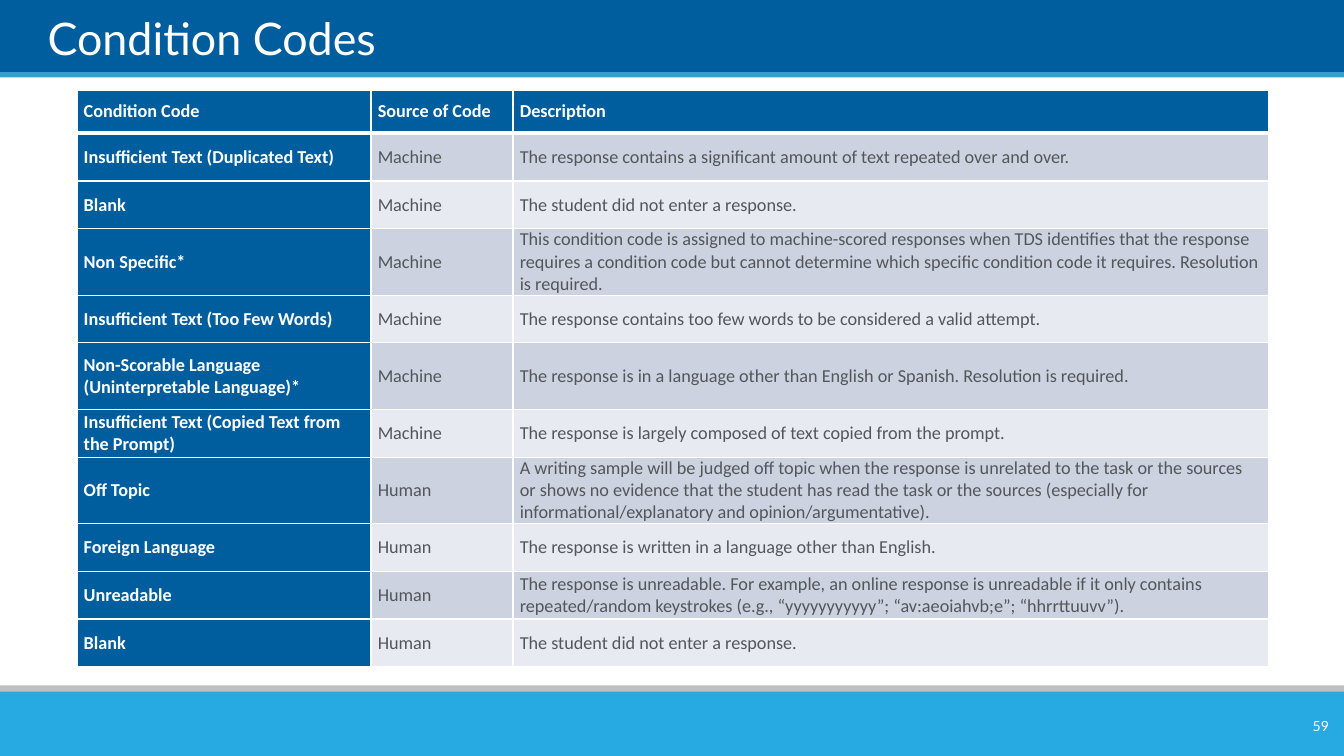
from dataclasses import dataclass

from lxml.etree import SubElement
from pptx import Presentation
from pptx.dml.color import RGBColor
from pptx.enum.shapes import MSO_SHAPE
from pptx.enum.text import MSO_ANCHOR, PP_ALIGN
from pptx.oxml.ns import qn
from pptx.slide import Slide
from pptx.table import _Cell
from pptx.text.text import TextFrame
from pptx.util import Cm, Pt


@dataclass(frozen=True)
class Theme:
    navy: str = "005E9E"
    sky: str = "35A0CE"
    footer: str = "27AAE1"
    silver: str = "BFBFBF"
    white: str = "FFFFFF"
    ink: str = "53565A"
    dark_band: str = "CCD2DF"
    light_band: str = "E7EAF0"
    heading_font: str = "Lato"
    table_font: str = "Calibri"
    title_size: int = 32
    table_size: int = 13
    number_size: int = 10
    thin_rule: int = 1
    thick_rule: int = 3


@dataclass(frozen=True)
class Band:
    top: float
    height: float
    color: str


@dataclass(frozen=True)
class Label:
    text: str
    left: float
    top: float
    width: float
    height: float
    size: int
    anchor: MSO_ANCHOR
    align: PP_ALIGN
    side_margin: float
    edge_margin: float


@dataclass(frozen=True)
class CodeRow:
    code: str
    source: str
    description: str
    height: float = 1.2


THEME = Theme()
PAGE_WIDTH, PAGE_HEIGHT = 33.87, 19.05
TALL_ROW = 1.68
COLUMN_WIDTHS = (7.41, 3.58, 19.03)

BANDS = (
    Band(-0.03, 1.9, THEME.navy),
    Band(1.82, 0.13, THEME.sky),
    Band(17.27, 0.36, THEME.silver),
    Band(17.43, 1.62, THEME.footer),
)

LABELS = (
    Label("Condition Codes", 1.2, 0.18, 31.57, 1.45, THEME.title_size,
          MSO_ANCHOR.BOTTOM, PP_ALIGN.LEFT, 0, 0),
    Label("59", 31.78, 17.91, 1.96, 0.76, THEME.number_size,
          MSO_ANCHOR.MIDDLE, PP_ALIGN.RIGHT, 0.25, 0.13),
)

ROWS = (
    CodeRow("Condition Code", "Source of Code", "Description", 1.09),
    CodeRow("Insufficient Text (Duplicated Text)", "Machine",
            "The response contains a significant amount of text repeated over and over."),
    CodeRow("Blank", "Machine", "The student did not enter a response."),
    CodeRow("Non Specific*", "Machine",
            "This condition code is assigned to machine-scored responses when TDS identifies "
            "that the response requires a condition code but cannot determine which specific "
            "condition code it requires. Resolution is required.", TALL_ROW),
    CodeRow("Insufficient Text (Too Few Words)", "Machine",
            "The response contains too few words to be considered a valid attempt."),
    CodeRow("Non-Scorable Language (Uninterpretable Language)*", "Machine",
            "The response is in a language other than English or Spanish. "
            "Resolution is required.", TALL_ROW),
    CodeRow("Insufficient Text (Copied Text from the Prompt)", "Machine",
            "The response is largely composed of text copied from the prompt."),
    CodeRow("Off Topic", "Human",
            "A writing sample will be judged off topic when the response is unrelated to the "
            "task or the sources or shows no evidence that the student has read the task or "
            "the sources (especially for informational/explanatory and "
            "opinion/argumentative).", TALL_ROW),
    CodeRow("Foreign Language", "Human",
            "The response is written in a language other than English."),
    CodeRow("Unreadable", "Human",
            "The response is unreadable. For example, an online response is unreadable if it "
            "only contains repeated/random keystrokes (e.g., “yyyyyyyyyyy”; “av:aeoiahvb;e”; "
            "“hhrrttuuvv”)."),
    CodeRow("Blank", "Human", "The student did not enter a response."),
)


def apply_format(target: object, values: dict[str, object]) -> None:
    for name, value in values.items():
        setattr(target, name, value)


def margins(side: float, edge: float) -> dict[str, object]:
    return {"margin_left": Cm(side), "margin_right": Cm(side),
            "margin_top": Cm(edge), "margin_bottom": Cm(edge)}


def write_text(frame: TextFrame, text: str, font: str, size: int, color: str,
               bold: bool = False, align: PP_ALIGN = PP_ALIGN.LEFT) -> None:
    para = frame.paragraphs[0]
    para.alignment = align
    span = para.add_run()
    span.text = text
    apply_format(span.font, {"name": font, "size": Pt(size), "bold": bold})
    span.font.color.rgb = RGBColor.from_string(color)


def draw_band(page: Slide, band: Band) -> None:
    box = page.shapes.add_shape(MSO_SHAPE.RECTANGLE, Cm(0), Cm(band.top),
                                Cm(PAGE_WIDTH), Cm(band.height))
    box.shadow.inherit = False
    box.fill.solid()
    box.fill.fore_color.rgb = RGBColor.from_string(band.color)
    box.line.fill.background()


def draw_label(page: Slide, label: Label) -> None:
    box = page.shapes.add_textbox(Cm(label.left), Cm(label.top),
                                  Cm(label.width), Cm(label.height))
    apply_format(box.text_frame, {
        "word_wrap": True, "vertical_anchor": label.anchor,
        **margins(label.side_margin, label.edge_margin)})
    write_text(box.text_frame, label.text, THEME.heading_font, label.size,
               THEME.white, align=label.align)


def set_borders(cell: _Cell, row_index: int) -> None:
    widths = {"lnL": THEME.thin_rule, "lnR": THEME.thin_rule,
              "lnT": THEME.thick_rule if row_index == 1 else THEME.thin_rule,
              "lnB": THEME.thick_rule if row_index == 0 else THEME.thin_rule}
    properties = cell._tc.get_or_add_tcPr()
    for side, width in widths.items():
        line = SubElement(properties, qn(f"a:{side}"), w=str(Pt(width)))
        fill = SubElement(line, qn("a:solidFill"))
        SubElement(fill, qn("a:srgbClr"), val=THEME.white)


def draw_cell(cell: _Cell, text: str, row_index: int, column_index: int) -> None:
    heading = row_index == 0 or column_index == 0
    band = THEME.dark_band if row_index % 2 else THEME.light_band
    set_borders(cell, row_index)
    cell.fill.solid()
    cell.fill.fore_color.rgb = RGBColor.from_string(THEME.navy if heading else band)
    apply_format(cell, {"vertical_anchor": MSO_ANCHOR.MIDDLE, **margins(0.17, 0)})
    write_text(cell.text_frame, text, THEME.table_font, THEME.table_size,
               THEME.white if heading else THEME.ink, bold=heading)


def draw_code_table(page: Slide) -> None:
    table = page.shapes.add_table(
        len(ROWS), len(COLUMN_WIDTHS), Cm(1.94), Cm(2.27),
        Cm(sum(COLUMN_WIDTHS)), Cm(sum(row.height for row in ROWS))).table
    apply_format(table, {"first_row": True, "first_col": True, "horz_banding": True})
    for column, width in zip(table.columns, COLUMN_WIDTHS):
        column.width = Cm(width)
    for row_index, row in enumerate(ROWS):
        table.rows[row_index].height = Cm(row.height)
        for column_index, text in enumerate((row.code, row.source, row.description)):
            draw_cell(table.cell(row_index, column_index), text, row_index, column_index)


def main() -> None:
    deck = Presentation()
    apply_format(deck, {"slide_width": Cm(PAGE_WIDTH), "slide_height": Cm(PAGE_HEIGHT)})
    page = deck.slides.add_slide(deck.slide_layouts[6])

    # Header and footer bands
    for band in BANDS:
        draw_band(page, band)

    # Condition code table
    draw_code_table(page)

    # Title and page number
    for label in LABELS:
        draw_label(page, label)

    deck.save("out.pptx")


if __name__ == "__main__":
    main()
